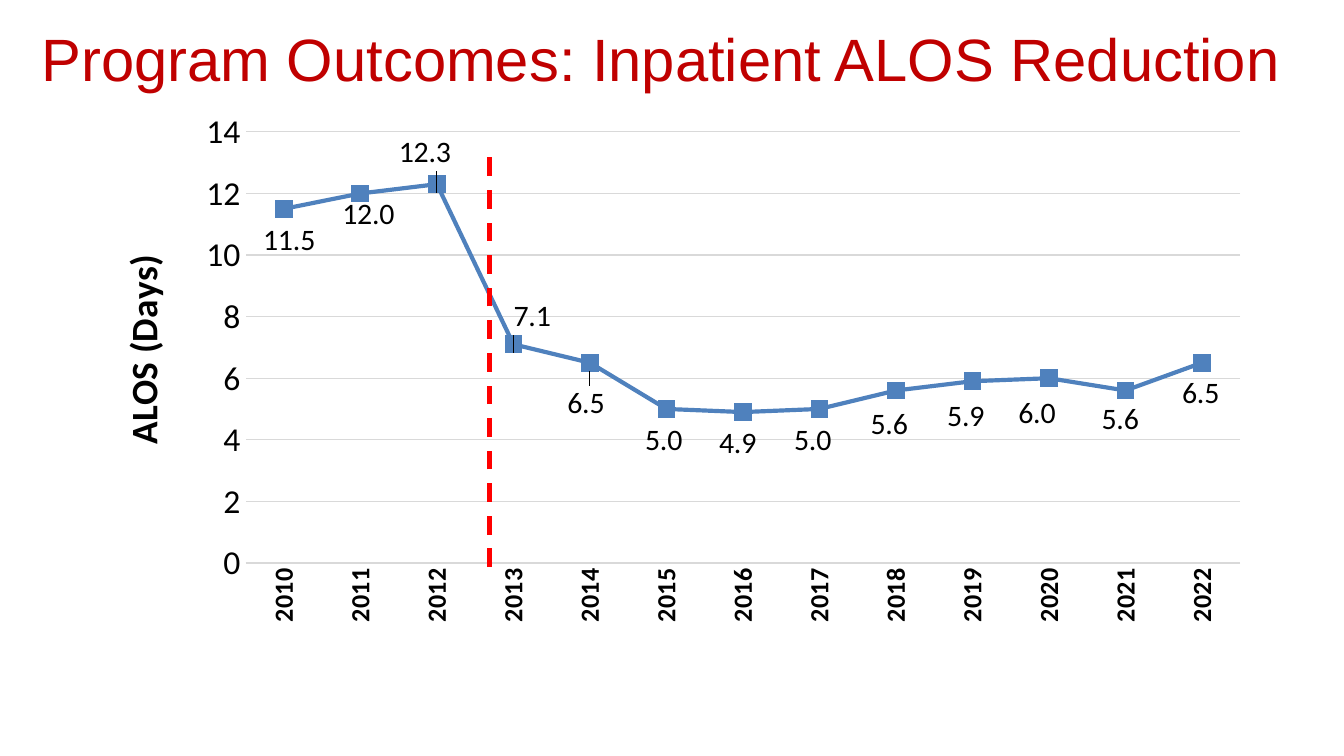
import pptx
import pptx.chart.data
import pptx.dml.color
import pptx.enum.chart
import pptx.enum.dml
import pptx.enum.shapes
import pptx.enum.text
import pptx.oxml
import pptx.oxml.ns
import pptx.util
from pptx.util import Inches, Pt

RGBColor = pptx.dml.color.RGBColor
BLACK = RGBColor(0x00, 0x00, 0x00)
DARK_RED = RGBColor(0xC0, 0x00, 0x00)
RED = RGBColor(0xFF, 0x00, 0x00)
BLUE = RGBColor(0x4F, 0x81, 0xBD)
GRID_GRAY = RGBColor(0xD9, 0xD9, 0xD9)

CHART_WIDTH, CHART_HEIGHT = 8.8, 4.13
NUMBER_FORMAT = "#,##0.0"

# Year, average length of stay, label shift in inches from just below the point
STAYS = [
    (2010, 11.5, 0.04, 0), (2011, 12.0, 0.06, -0.08), (2012, 12.3, -0.09, -0.47),
    (2013, 7.1, 0.14, -0.44), (2014, 6.5, -0.03, 0.07), (2015, 5.0, -0.02, 0),
    (2016, 4.9, -0.04, 0), (2017, 5.0, -0.05, 0), (2018, 5.6, -0.05, 0.02),
    (2019, 5.9, -0.05, 0.03), (2020, 6.0, -0.09, 0.03), (2021, 5.6, -0.04, -0.02),
    (2022, 6.5, -0.01, -0.01),
]


def style_font(font, size, color=BLACK, bold=False, name="Calibri"):
    font.size = Pt(size)
    font.color.rgb = color
    font.bold = bold
    font.name = name


def manual_layout(**settings):
    children = "".join(f'<c:{key} val="{value}"/>' for key, value in settings.items())
    return pptx.oxml.parse_xml(
        f'<c:layout {pptx.oxml.ns.nsdecls("c")}><c:manualLayout>{children}'
        "</c:manualLayout></c:layout>")


presentation = pptx.Presentation()
presentation.slide_width = Inches(10)
presentation.slide_height = Inches(10) * 9 // 16
slide = presentation.slides.add_slide(presentation.slide_layouts[6])

# Heading
heading = slide.shapes.add_textbox(Inches(0.21), Inches(0.1), Inches(9.66), Inches(0.65))
heading.text_frame.word_wrap = True
heading.text_frame.vertical_anchor = pptx.enum.text.MSO_ANCHOR.MIDDLE
heading.text_frame.text = "Program Outcomes: Inpatient ALOS Reduction"
style_font(heading.text_frame.paragraphs[0].runs[0].font, 32, DARK_RED, name="Arial")

# Line chart
stay_data = pptx.chart.data.CategoryChartData(number_format=NUMBER_FORMAT)
stay_data.categories = [str(year) for year, *_ in STAYS]
stay_data.add_series("Series 1", [days for _, days, *_ in STAYS])
chart = slide.shapes.add_chart(
    pptx.enum.chart.XL_CHART_TYPE.LINE_MARKERS, Inches(0.64), Inches(0.83),
    Inches(CHART_WIDTH), Inches(CHART_HEIGHT), stay_data).chart
chart.has_legend = False
chart.has_title = False
style_font(chart.font, 10)
plot = chart.plots[0]
plot_area = plot._element.getparent()
for old_layout in plot_area.findall(pptx.oxml.ns.qn("c:layout")):
    plot_area.remove(old_layout)
plot_area.insert(0, manual_layout(
    layoutTarget="inner", xMode="edge", yMode="edge", x=0.135, y=0.034, w=0.841, h=0.779))

# Year axis
years = chart.category_axis
years.major_tick_mark = pptx.enum.chart.XL_TICK_MARK.NONE
years.format.line.color.rgb = GRID_GRAY
years.format.line.width = Pt(0.75)
style_font(years.tick_labels.font, 14, bold=True)
years._element.txPr.bodyPr.set("rot", "-5400000")
years._element.txPr.bodyPr.set("vert", "horz")

# Days axis
days_axis = chart.value_axis
days_axis.minimum_scale = 0
days_axis.maximum_scale = 14
days_axis.major_unit = 2
days_axis.major_tick_mark = pptx.enum.chart.XL_TICK_MARK.NONE
days_axis.format.line.fill.background()
days_axis.major_gridlines.format.line.color.rgb = GRID_GRAY
days_axis.major_gridlines.format.line.width = Pt(0.75)
style_font(days_axis.tick_labels.font, 18)
days_axis.tick_labels.number_format = "General"
days_axis.tick_labels.number_format_is_linked = False

axis_title = days_axis.axis_title
axis_title.text_frame.text = "ALOS (Days)"
style_font(axis_title.text_frame.paragraphs[0].runs[0].font, 20, bold=True)
axis_title.text_frame._txBody.bodyPr.set("rot", "-5400000")
axis_title.text_frame._txBody.bodyPr.set("vert", "horz")
for old_layout in axis_title._element.findall(pptx.oxml.ns.qn("c:layout")):
    axis_title._element.remove(old_layout)
axis_title._element.find(pptx.oxml.ns.qn("c:tx")).addnext(
    manual_layout(xMode="edge", yMode="edge", x=0.02, y=0.245))

# Length of stay line
plot.vary_by_categories = False
stay_line = plot.series[0]
stay_line.smooth = False
stay_line.format.line.color.rgb = BLUE
stay_line.format.line.width = Pt(2.25)
stay_line.marker.style = pptx.enum.chart.XL_MARKER_STYLE.SQUARE
stay_line.marker.size = 9
stay_line.marker.format.fill.solid()
stay_line.marker.format.fill.fore_color.rgb = BLUE
stay_line.marker.format.line.color.rgb = BLUE

# Value labels, each shifted clear of the line
stay_labels = stay_line.data_labels
stay_labels.show_value = True
stay_labels.number_format = NUMBER_FORMAT
stay_labels.number_format_is_linked = False
style_font(stay_labels.font, 16)
for index, (_, _, shift_x, shift_y) in enumerate(STAYS):
    label = stay_line.points[index].data_label
    label.position = pptx.enum.chart.XL_LABEL_POSITION.BELOW
    style_font(label.font, 16)
    label_xml = stay_labels._element.findall(pptx.oxml.ns.qn("c:dLbl"))[index]
    label_xml.insert(1, manual_layout(
        x=round(shift_x / CHART_WIDTH, 4), y=round(shift_y / CHART_HEIGHT, 4)))
    label_xml.insert(2, pptx.oxml.parse_xml(
        f'<c:numFmt {pptx.oxml.ns.nsdecls("c")} formatCode="{NUMBER_FORMAT}" sourceLinked="0"/>'))

# No leader lines between points and shifted labels
for leader_lines in stay_labels._element.findall(pptx.oxml.ns.qn("c:showLeaderLines")):
    stay_labels._element.remove(leader_lines)
stay_labels._element.append(pptx.oxml.parse_xml(
    f'<c:extLst {pptx.oxml.ns.nsdecls("c")}>'
    '<c:ext uri="{CE6537A1-D6FC-4f65-9D91-7224C49458BB}" '
    'xmlns:c15="http://schemas.microsoft.com/office/drawing/2012/chart">'
    '<c15:showLeaderLines val="0"/></c:ext></c:extLst>'))

# Program start marker
program_start = slide.shapes.add_connector(
    pptx.enum.shapes.MSO_CONNECTOR.STRAIGHT,
    Inches(3.64), Inches(4.22), Inches(3.64), Inches(1.14))
program_start.line.color.rgb = RED
program_start.line.width = Pt(2.5)
program_start.line.dash_style = pptx.enum.dml.MSO_LINE.DASH
program_start._element.spPr.append(
    pptx.oxml.parse_xml(f'<a:effectLst {pptx.oxml.ns.nsdecls("a")}/>'))

presentation.save("out.pptx")
